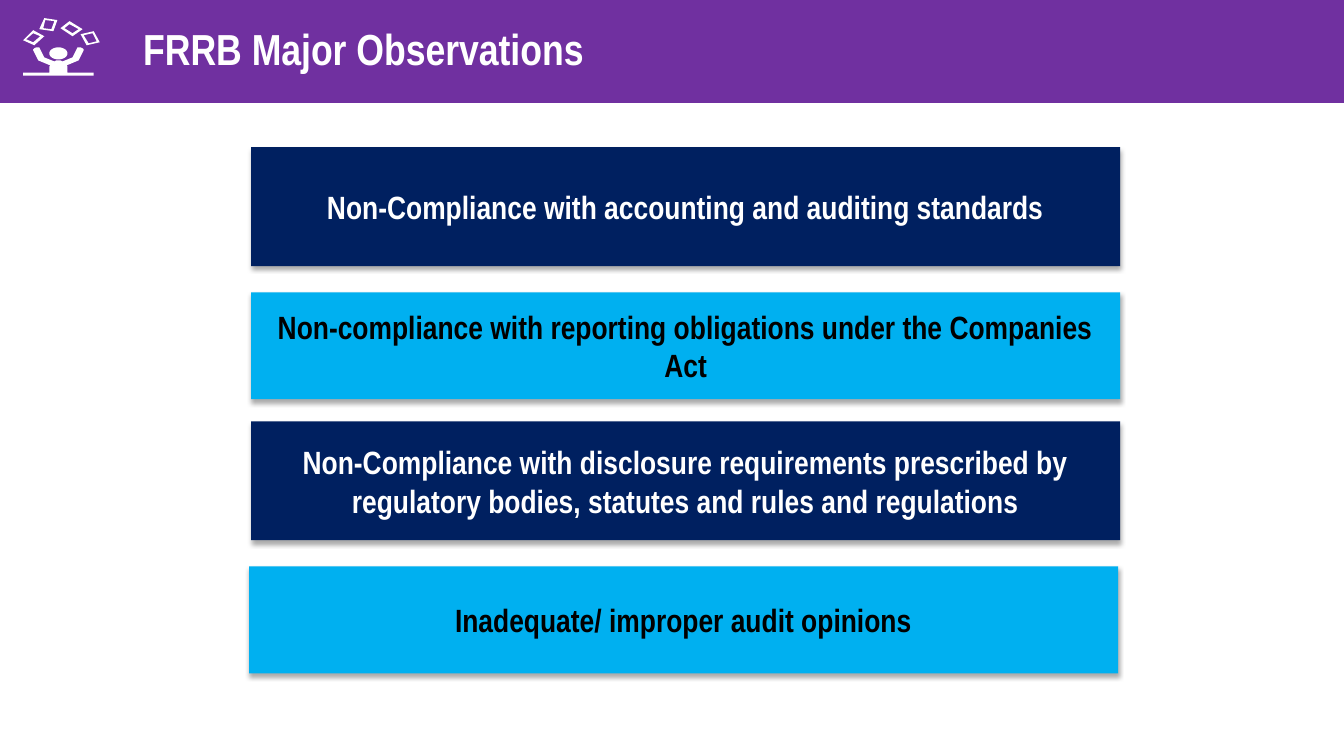
from math import cos, pi, sin

from lxml.etree import SubElement
from pptx import Presentation
from pptx.dml.color import RGBColor
from pptx.enum.shapes import MSO_SHAPE
from pptx.enum.text import MSO_ANCHOR, MSO_AUTO_SIZE, PP_ALIGN
from pptx.oxml.ns import qn
from pptx.util import Inches, Pt

PURPLE = RGBColor(0x70, 0x30, 0xA0)
NAVY = RGBColor(0x00, 0x20, 0x60)
SKY = RGBColor(0x00, 0xB0, 0xF0)
WHITE = RGBColor(0xFF, 0xFF, 0xFF)
BLACK = RGBColor(0x00, 0x00, 0x00)
FONT = "Arial Narrow"

TITLE = "FRRB Major Observations"
NAVY_STYLE = (1.18, NAVY, WHITE)
SKY_STYLE = (1.06, SKY, BLACK)
OBSERVATIONS = [
    ("Non-Compliance with accounting and auditing standards", 2.49, 1.46, NAVY_STYLE),
    ("Non-compliance with reporting obligations under the Companies Act", 2.49, 2.9, SKY_STYLE),
    ("Non-Compliance with disclosure requirements prescribed by regulatory bodies, "
     "statutes and rules and regulations", 2.49, 4.18, NAVY_STYLE),
    ("Inadequate/ improper audit opinions", 2.47, 5.62, SKY_STYLE),
]
BOX_WIDTH = 8.62

PAPERS = [
    [(0.33, 0.3), (0.44, 0.36), (0.34, 0.45), (0.23, 0.4)],
    [(0.33, 0.33), (0.26, 0.39), (0.33, 0.42), (0.4, 0.36)],
    [(0.69, 0.21), (0.6, 0.28), (0.72, 0.36), (0.82, 0.29)],
    [(0.69, 0.24), (0.78, 0.29), (0.72, 0.33), (0.64, 0.28)],
    [(0.57, 0.2), (0.44, 0.18), (0.39, 0.29), (0.53, 0.31)],
    [(0.54, 0.21), (0.51, 0.29), (0.43, 0.28), (0.45, 0.2)],
    [(0.93, 0.31), (0.99, 0.42), (0.86, 0.45), (0.8, 0.34)],
    [(0.92, 0.33), (0.83, 0.35), (0.88, 0.43), (0.96, 0.41)],
]
HEAD_X, HEAD_Y, HEAD_RX, HEAD_RY = 0.58, 0.53, 0.09, 0.06
LEFT_HALF = [
    (0.58, 0.6), (0.56, 0.6), (0.54, 0.61), (0.44, 0.57), (0.4, 0.49), (0.39, 0.47),
    (0.36, 0.47), (0.34, 0.48), (0.33, 0.49), (0.33, 0.5), (0.37, 0.58), (0.38, 0.6),
    (0.5, 0.65), (0.49, 0.66), (0.49, 0.72), (0.23, 0.72), (0.23, 0.75),
]


def write(shape, text, size, color, align):
    tf = shape.text_frame
    tf.word_wrap = True
    tf.auto_size = MSO_AUTO_SIZE.NONE
    tf.vertical_anchor = MSO_ANCHOR.MIDDLE
    p = tf.paragraphs[0]
    p.alignment = align
    r = p.add_run()
    r.text = text
    r.font.name = FONT
    r.font.size = Pt(size)
    r.font.bold = True
    r.font.color.rgb = color


def paint(shape, color):
    shape.fill.solid()
    shape.fill.fore_color.rgb = color
    shape.line.fill.background()
    shape.shadow.inherit = False


def add_soft_shadow(shape):
    effects = shape._element.spPr.find(qn("a:effectLst"))
    shadow = SubElement(effects, qn("a:outerShdw"), blurRad=str(Pt(3.5)),
                        dist=str(Pt(2.2)), dir="5400000", rotWithShape="0")
    tone = SubElement(shadow, qn("a:srgbClr"), val="000000")
    SubElement(tone, qn("a:alpha"), val="32000")


def add_juggler(s):
    head = [(HEAD_X + HEAD_RX * cos(i * pi / 16), HEAD_Y + HEAD_RY * sin(i * pi / 16))
            for i in range(32)]
    right_half = [(2 * HEAD_X - x, y) for x, y in reversed(LEFT_HALF)]
    outlines = [[(Inches(x), Inches(y)) for x, y in points]
                for points in PAPERS + [head, LEFT_HALF + right_half]]
    builder = s.shapes.build_freeform(*outlines[0][0])
    for i, points in enumerate(outlines):
        if i:
            builder.move_to(*points[0])
        builder.add_line_segments(points[1:], close=True)
    paint(builder.convert_to_shape(), WHITE)


def main():
    prs = Presentation()
    prs.slide_width, prs.slide_height = Inches(13.33), Inches(7.5)
    s = prs.slides.add_slide(prs.slide_layouts[5])

    title = s.shapes.title
    title.left, title.top = Inches(-0.04), Inches(-0.08)
    title.width, title.height = Inches(13.37), Inches(1.11)
    title.fill.solid()
    title.fill.fore_color.rgb = PURPLE
    title.line.color.rgb = WHITE
    title.line.width = Pt(0.5)
    title.text_frame.margin_left = Inches(1.46)
    write(title, TITLE, 31, WHITE, PP_ALIGN.LEFT)

    add_juggler(s)

    for text, left, top, (height, fill, color) in OBSERVATIONS:
        box = s.shapes.add_shape(MSO_SHAPE.RECTANGLE, Inches(left), Inches(top),
                                 Inches(BOX_WIDTH), Inches(height))
        paint(box, fill)
        add_soft_shadow(box)
        write(box, text, 23, color, PP_ALIGN.CENTER)

    prs.save("out.pptx")


if __name__ == "__main__":
    main()
